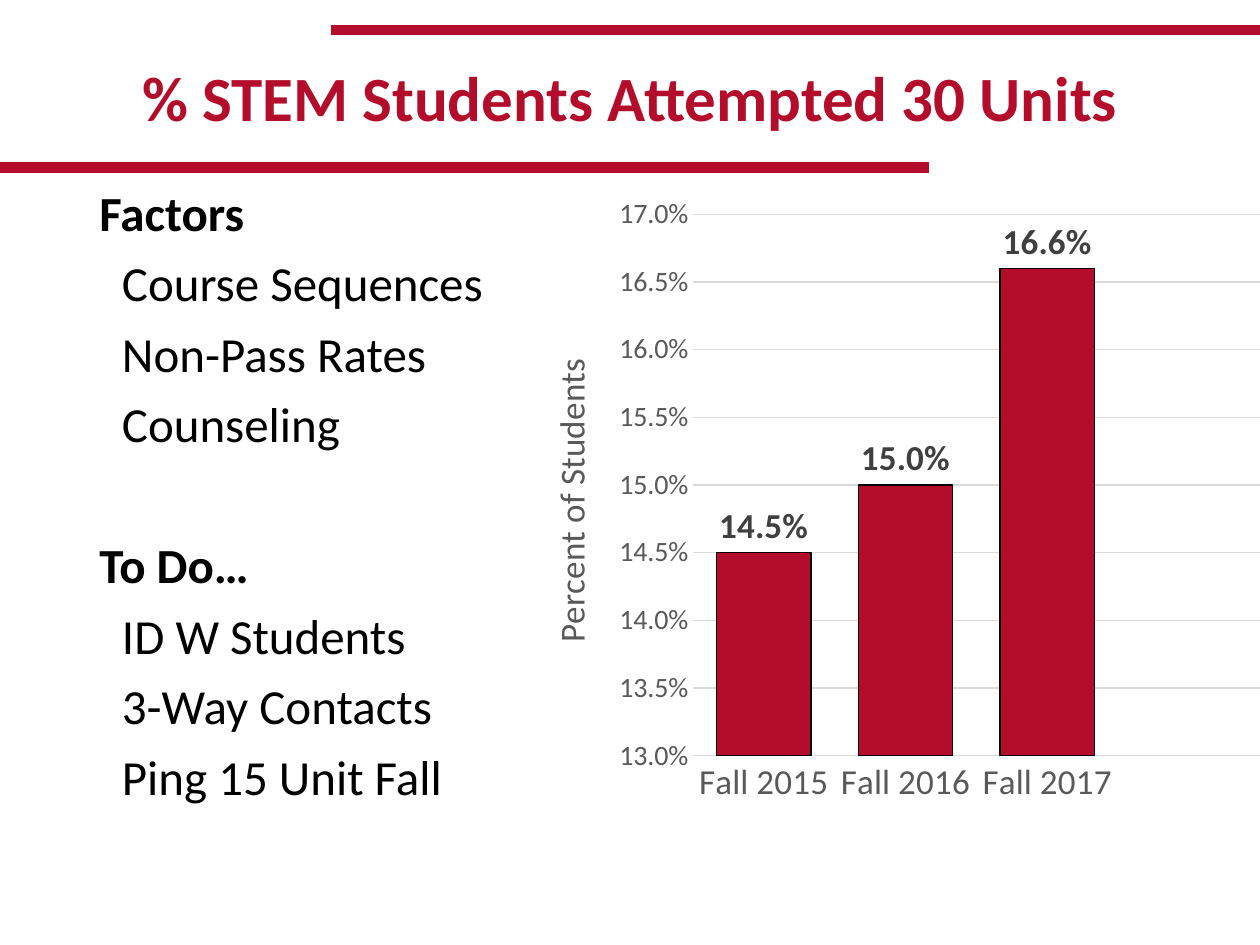
"""Build a slide on the share of STEM students who attempted 30 units."""
from pptx import Presentation
from pptx.chart.data import CategoryChartData
from pptx.dml.color import RGBColor
from pptx.enum import chart as ch, shapes, text
from pptx.oxml import parse_xml
from pptx.oxml.ns import nsdecls, qn
from pptx.util import Inches, Pt

TITLE = "% STEM Students Attempted 30 Units"
SECTIONS = [
    ("Factors", ["Course Sequences", "Non-Pass Rates", "Counseling"]),
    ("To Do…", ["ID W Students", "3-Way Contacts", "Ping 15 Unit Fall"]),
]
RATES = [("Fall 2015", 0.145), ("Fall 2016", 0.15), ("Fall 2017", 0.166), ("", None)]
AXIS_TITLE = "Percent of Students"
RULES = [(0, 7.37, 1.33), (2.63, 10, 0.24)]
TITLE_BOX = (0.69, 0.4, 8.62, 0.81)
BODY_BOX = (0.69, 1.45, 3.5, 5.3)
CHART_BOX = (4.12, 1.45, 6, 5)
PLOT_AREA = {"x": 0.23, "y": 0.05, "w": 0.75, "h": 0.86}
THEME = {
    "font": "Calibri", "red": "B40D2B", "black": "000000", "grid": "D9D9D9",
    "axis": "595959", "label": "404040",
    "title": 36, "body": 28, "chart": 20, "ticks": 16, "base": 10,
}


def color(name):
    return RGBColor.from_string(THEME[name])


def style(font, size, tint, bold=False):
    font.name, font.size, font.bold = THEME["font"], Pt(THEME[size]), bold
    font.color.rgb = color(tint)


def stroke(line, tint, width):
    line.color.rgb, line.width = color(tint), Pt(width)


def add_rule(slide, left, right, y):
    rule = slide.shapes.add_connector(
        shapes.MSO_CONNECTOR.STRAIGHT, Inches(left), Inches(y), Inches(right), Inches(y))
    stroke(rule.line, "red", 6)
    rule._element.spPr.append(parse_xml(f"<a:effectLst {nsdecls('a')}/>"))


def add_title(slide):
    title = slide.shapes.title
    title.left, title.top, title.width, title.height = map(Inches, TITLE_BOX)
    frame = title.text_frame
    frame.auto_size, frame.word_wrap = text.MSO_AUTO_SIZE.NONE, True
    frame.vertical_anchor = text.MSO_ANCHOR.MIDDLE
    heading = frame.paragraphs[0]
    heading.alignment, heading.line_spacing = text.PP_ALIGN.CENTER, 0.9
    run = heading.add_run()
    run.text = TITLE
    style(run.font, "title", "red", True)


def add_sections(slide):
    frame = slide.shapes.add_textbox(*map(Inches, BODY_BOX)).text_frame
    frame.word_wrap = True
    rows = []
    for index, (heading, items) in enumerate(SECTIONS):
        rows.append((heading, True, 50.5 if index else 10))
        rows += [(item, False, 10) for item in items]
    for index, (wording, is_heading, gap) in enumerate(rows):
        row = frame.add_paragraph() if index else frame.paragraphs[0]
        row.line_spacing, row.space_before = 0.9, Pt(gap)
        if not is_heading:
            row._p.get_or_add_pPr().set("marL", str(Inches(0.18)))
        run = row.add_run()
        run.text = wording
        style(run.font, "body", "black", is_heading)


def place_plot(chart):
    plot_area = chart._chartSpace.chart.plotArea
    for layout in plot_area.findall(qn("c:layout")):
        plot_area.remove(layout)
    modes = '<c:xMode val="edge"/><c:yMode val="edge"/>'
    sizes = "".join(f'<c:{key} val="{value}"/>' for key, value in PLOT_AREA.items())
    plot_area.insert(0, parse_xml(
        f"<c:layout {nsdecls('c')}><c:manualLayout>"
        f'<c:layoutTarget val="inner"/>{modes}{sizes}</c:manualLayout></c:layout>'))


def add_rate_chart(slide):
    rates = CategoryChartData(number_format="0.0%")
    rates.categories = [term for term, _ in RATES]
    rates.add_series("Series 1", [rate for _, rate in RATES])
    chart = slide.shapes.add_chart(
        ch.XL_CHART_TYPE.COLUMN_CLUSTERED, *map(Inches, CHART_BOX), rates).chart
    chart.has_legend = chart.has_title = False
    style(chart.font, "base", "black")
    place_plot(chart)

    terms, percents = chart.category_axis, chart.value_axis
    for axis, size in ((terms, "chart"), (percents, "ticks")):
        axis.major_tick_mark = axis.minor_tick_mark = ch.XL_TICK_MARK.NONE
        style(axis.tick_labels.font, size, "axis")
    stroke(terms.format.line, "grid", 0.75)
    percents.format.line.fill.background()
    percents.minimum_scale, percents.maximum_scale = 0.13, 0.17
    percents.major_unit = 0.005
    percents.tick_labels.number_format = "0.0%"
    percents.tick_labels.number_format_is_linked = False
    stroke(percents.major_gridlines.format.line, "grid", 0.75)
    run = percents.axis_title.text_frame.paragraphs[0].add_run()
    run.text = AXIS_TITLE
    style(run.font, "chart", "axis")

    columns = chart.plots[0]
    columns.gap_width, columns.overlap, columns.vary_by_categories = 50, -6, False
    series = columns.series[0]
    series.format.fill.solid()
    series.format.fill.fore_color.rgb = color("red")
    stroke(series.format.line, "black", 0.75)
    labels = series.data_labels
    labels.show_value = True
    labels.number_format, labels.number_format_is_linked = "0.0%", False
    labels.position = ch.XL_LABEL_POSITION.OUTSIDE_END
    style(labels.font, "chart", "label", True)


def main():
    deck = Presentation()
    deck.slide_width, deck.slide_height = Inches(10), Inches(7.5)
    slide = deck.slides.add_slide(deck.slide_layouts[5])
    for rule in RULES:
        add_rule(slide, *rule)
    add_title(slide)
    add_sections(slide)
    add_rate_chart(slide)
    deck.save("out.pptx")


if __name__ == "__main__":
    main()
